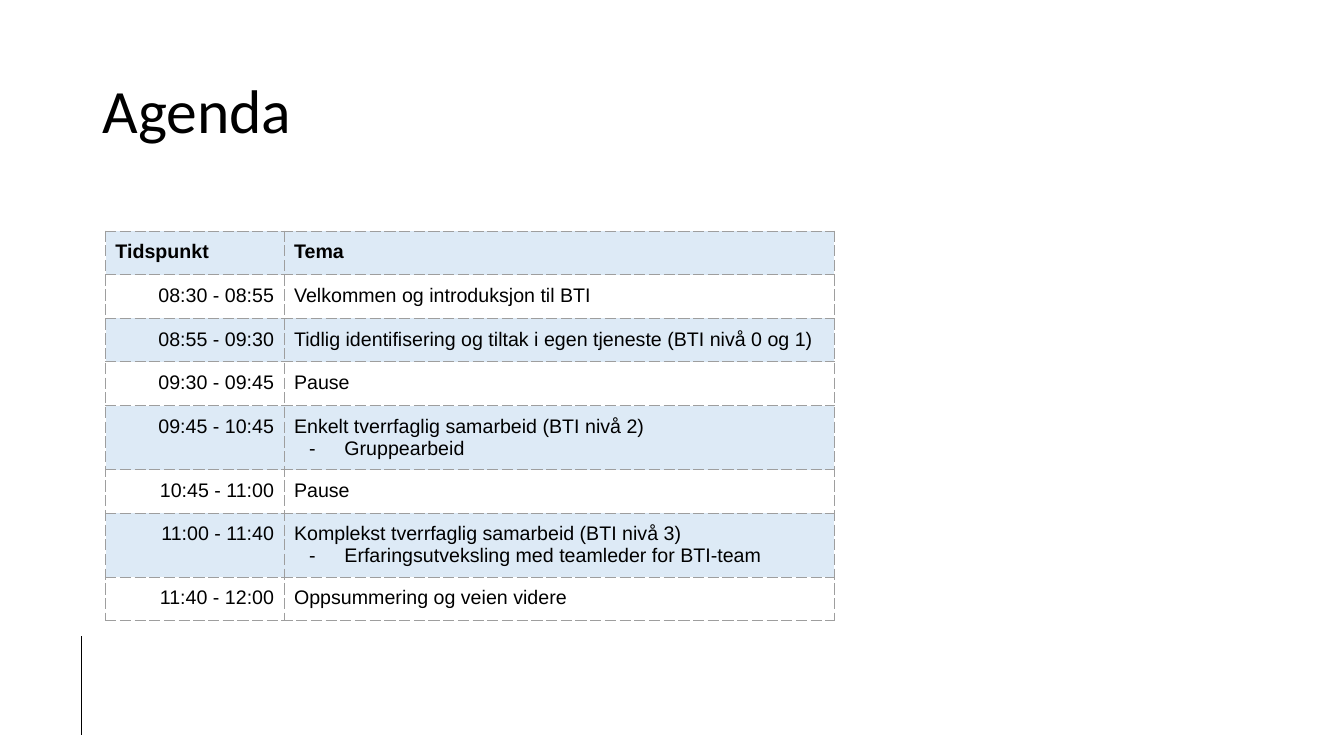
from lxml.etree import SubElement
from pptx import Presentation
from pptx.dml.color import RGBColor
from pptx.enum.shapes import MSO_CONNECTOR
from pptx.enum.text import MSO_ANCHOR, MSO_AUTO_SIZE, PP_ALIGN
from pptx.oxml.ns import qn
from pptx.util import Cm, Pt

TITLE = "Agenda"
AGENDA = [
    ("Tidspunkt", ["Tema"]),
    ("08:30 - 08:55", ["Velkommen og introduksjon til BTI"]),
    ("08:55 - 09:30", ["Tidlig identifisering og tiltak i egen tjeneste (BTI nivå 0 og 1)"]),
    ("09:30 - 09:45", ["Pause"]),
    ("09:45 - 10:45", ["Enkelt tverrfaglig samarbeid (BTI nivå 2)", "Gruppearbeid"]),
    ("10:45 - 11:00", ["Pause"]),
    ("11:00 - 11:40", ["Komplekst tverrfaglig samarbeid (BTI nivå 3)",
                       "Erfaringsutveksling med teamleder for BTI-team"]),
    ("11:40 - 12:00", ["Oppsummering og veien videre"]),
]
COLUMN_WIDTHS = (Cm(4.5), Cm(13.86))
ROW_HEIGHT = Cm(1.1)
CELL_MARGIN = Cm(0.25)
BLACK = RGBColor(0x00, 0x00, 0x00)
BAND = RGBColor(0xDD, 0xEA, 0xF6)
BORDER = RGBColor(0x9E, 0x9E, 0x9E)


def set_font(paragraph, name, size, bold=False):
    for span in paragraph.runs:
        span.font.name = name
        span.font.size = Pt(size)
        span.font.bold = bold
        span.font.color.rgb = BLACK


def add_dash_bullet(paragraph):
    properties = paragraph._p.get_or_add_pPr()
    properties.set("marL", str(Cm(1.27)))
    properties.set("indent", str(-Cm(0.89)))
    color = SubElement(properties, qn("a:buClr"))
    SubElement(color, qn("a:srgbClr"), val=str(BLACK))
    SubElement(properties, qn("a:buFont"), typeface="Arial")
    SubElement(properties, qn("a:buChar"), char="-")


def add_dashed_borders(cell):
    properties = cell._tc.get_or_add_tcPr()
    for side in ("lnL", "lnR", "lnT", "lnB"):
        line = SubElement(properties, qn(f"a:{side}"), w=str(Pt(0.75)))
        fill = SubElement(line, qn("a:solidFill"))
        SubElement(fill, qn("a:srgbClr"), val=str(BORDER))
        SubElement(line, qn("a:prstDash"), val="dash")


def fill_cell(cell, lines, row_index, alignment):
    add_dashed_borders(cell)
    if row_index % 2 == 0:
        cell.fill.solid()
        cell.fill.fore_color.rgb = BAND
    else:
        cell.fill.background()
    cell.margin_left = cell.margin_right = CELL_MARGIN
    cell.margin_top = cell.margin_bottom = CELL_MARGIN
    cell.text_frame.text = "\n".join(lines)
    for index, paragraph in enumerate(cell.text_frame.paragraphs):
        if index:
            add_dash_bullet(paragraph)
        paragraph.alignment = alignment
        set_font(paragraph, "Arial", 14, bold=row_index == 0)


def add_title(page):
    title = page.shapes.title
    title.left, title.top, title.width, title.height = Cm(2.33), Cm(1.01), Cm(29.21), Cm(3.68)
    frame = title.text_frame
    frame.text = TITLE
    frame.auto_size = MSO_AUTO_SIZE.NONE
    frame.vertical_anchor = MSO_ANCHOR.MIDDLE
    paragraph = frame.paragraphs[0]
    paragraph.alignment = PP_ALIGN.LEFT
    paragraph.line_spacing = 0.9
    set_font(paragraph, "Calibri", 44)


def add_agenda(page):
    table = page.shapes.add_table(
        len(AGENDA), len(COLUMN_WIDTHS), Cm(2.66), Cm(5.82),
        sum(COLUMN_WIDTHS), ROW_HEIGHT * len(AGENDA)).table
    table.first_row = table.horz_banding = False
    for column, width in zip(table.columns, COLUMN_WIDTHS):
        column.width = width
    for row_index, (time, topics) in enumerate(AGENDA):
        table.rows[row_index].height = ROW_HEIGHT
        time_alignment = PP_ALIGN.RIGHT if row_index else PP_ALIGN.LEFT
        fill_cell(table.cell(row_index, 0), [time], row_index, time_alignment)
        fill_cell(table.cell(row_index, 1), topics, row_index, PP_ALIGN.LEFT)


def add_side_line(page):
    line = page.shapes.add_connector(
        MSO_CONNECTOR.STRAIGHT, Cm(2.06), Cm(16.03), Cm(2.06), Cm(18.52))
    line.line.color.rgb = BLACK
    line.line.width = Pt(0.75)
    SubElement(line._element.spPr, qn("a:effectLst"))


def main():
    deck = Presentation()
    deck.slide_width, deck.slide_height = Cm(33.87), Cm(19.05)
    page = deck.slides.add_slide(deck.slide_layouts[5])
    add_side_line(page)
    add_title(page)
    add_agenda(page)
    deck.save("out.pptx")


if __name__ == "__main__":
    main()
